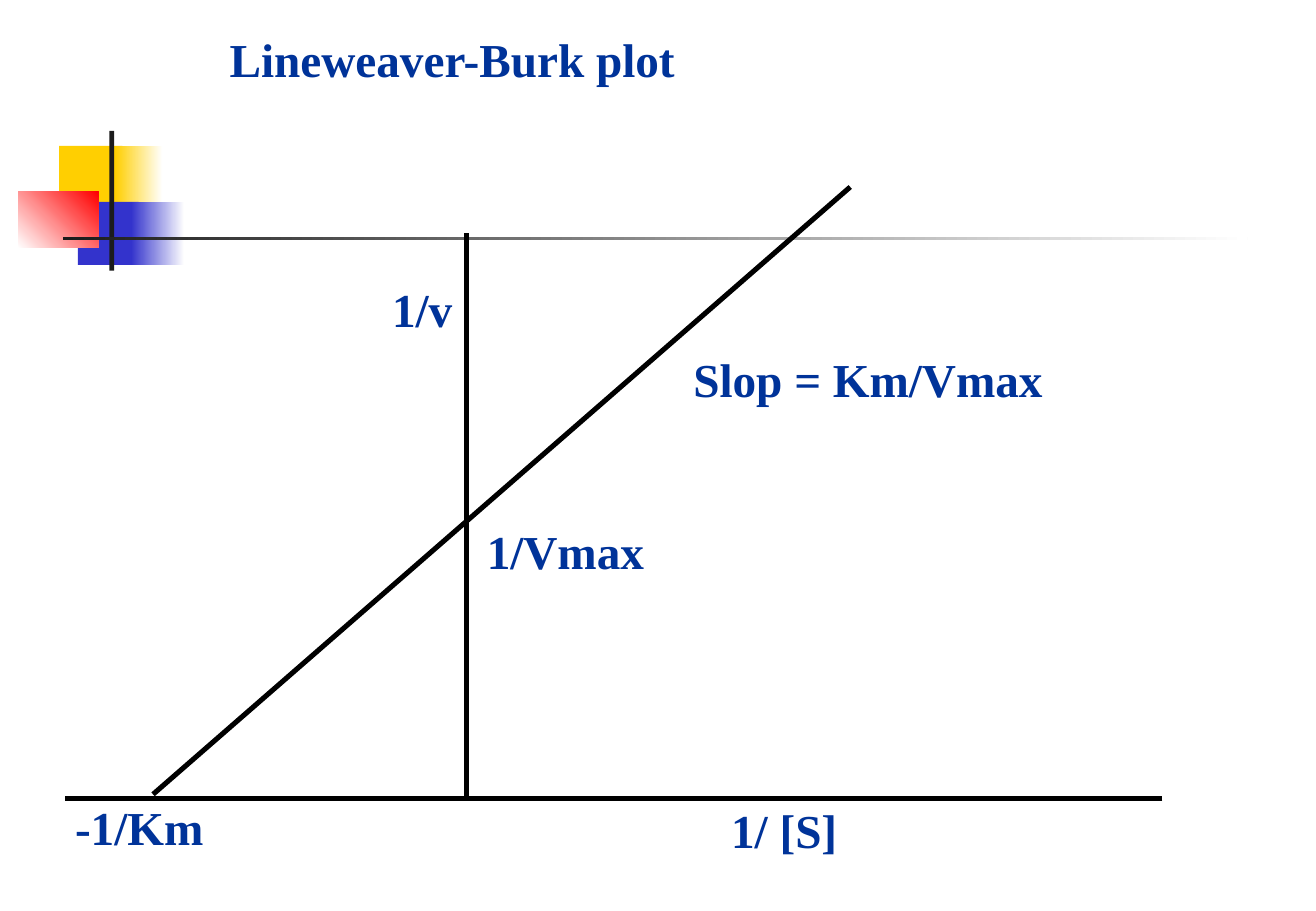
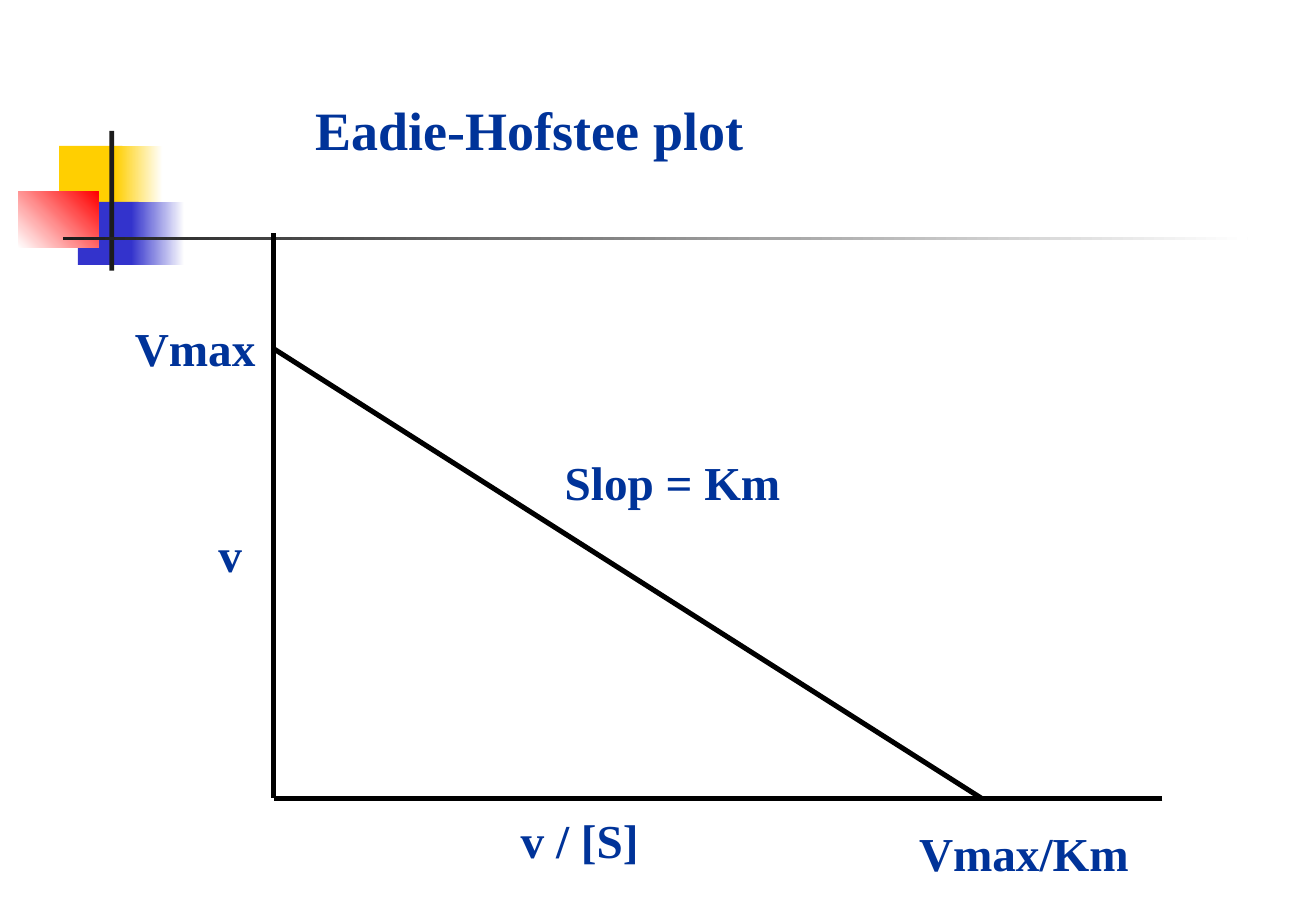
from typing import NamedTuple, Optional

from lxml.etree import SubElement
from pptx import Presentation
from pptx.dml.color import RGBColor
from pptx.enum.shapes import MSO_CONNECTOR, MSO_SHAPE
from pptx.enum.text import MSO_ANCHOR, MSO_AUTO_SIZE, PP_ALIGN
from pptx.oxml.ns import qn
from pptx.slide import Slide, SlideLayout
from pptx.text.text import TextFrame
from pptx.util import Cm, Pt

NAVY = RGBColor(0x00, 0x33, 0x99)
BLACK = RGBColor(0x00, 0x00, 0x00)
WHITE = RGBColor(0xFF, 0xFF, 0xFF)
YELLOW = RGBColor(0xFF, 0xCF, 0x01)
BLUE = RGBColor(0x33, 0x33, 0xCC)
RED = RGBColor(0xFF, 0x00, 0x00)
CHARCOAL = RGBColor(0x1C, 0x1C, 0x1C)

FONT_NAME = "Times New Roman"
LABEL_SIZE = 28
LABEL_HEIGHT = 1.45
TITLE_WIDTH = 16.71
AXIS_TOP, AXIS_FLOOR, AXIS_RIGHT = 4.88, 16.69, 24.31


class Block(NamedTuple):
    left: float
    top: float
    width: float
    height: float
    color: RGBColor
    end_color: Optional[RGBColor] = None
    angle: float = 0


class Segment(NamedTuple):
    start_x: float
    start_y: float
    end_x: float
    end_y: float


class Label(NamedTuple):
    text: str
    left: float
    top: float
    width: float


class Title(NamedTuple):
    text: str
    left: float
    top: float
    height: float
    size: int


class Plot(NamedTuple):
    title: Title
    axis_x: float
    axis_left: float
    trend: Segment
    labels: list[Label]


MOTIF = [
    Block(1.24, 3.05, 1.32, 1.32, YELLOW),
    Block(2.41, 3.05, 0.99, 1.32, YELLOW, WHITE),
    Block(1.63, 4.22, 1.27, 1.32, BLUE),
    Block(2.74, 4.22, 1.12, 1.32, BLUE, WHITE),
    Block(0.38, 4.01, 1.68, 1.17, WHITE, RED, 45),
    Block(2.29, 2.74, 0.1, 2.92, CHARCOAL),
    Block(1.32, 4.95, 24.77, 0.08, CHARCOAL, WHITE),
]

PLOTS = [
    Plot(
        Title("Lineweaver-Burk plot", 4.55, 0.51, 1.45, 28),
        axis_x=9.75,
        axis_left=1.35,
        trend=Segment(3.2, 16.61, 17.78, 3.91),
        labels=[
            Label("1/Vmax", 9.93, 10.8, 3.84),
            Label("-1/Km", 1.32, 16.56, 3.23),
            Label("Slop = Km/Vmax", 14.25, 7.19, 7.9),
            Label("1/ [S]", 15.04, 16.64, 2.77),
            Label("1/v", 7.95, 5.74, 1.78),
        ],
    ),
    Plot(
        Title("Eadie-Hofstee plot", 6.35, 1.9, 1.63, 32),
        axis_x=5.72,
        axis_left=5.72,
        trend=Segment(20.52, AXIS_FLOOR, 5.72, 7.29),
        labels=[
            Label("Vmax", 2.57, 6.55, 3.07),
            Label("Vmax/Km", 18.97, 17.12, 4.95),
            Label("Slop = Km", 11.56, 9.35, 5.08),
            Label("v / [S]", 10.64, 16.84, 3.02),
            Label("v", 4.32, 10.85, 1.02),
        ],
    ),
]


def add_motif(layout: SlideLayout, slide: Slide) -> None:
    """Draw the motif with the slide's shape tools and move it to the shared layout."""
    for shape_id, block in enumerate(MOTIF, start=101):
        shape = slide.shapes.add_shape(
            MSO_SHAPE.RECTANGLE,
            Cm(block.left), Cm(block.top), Cm(block.width), Cm(block.height),
        )
        shape.shadow.inherit = False
        shape.line.fill.background()
        if block.end_color is None:
            shape.fill.solid()
            shape.fill.fore_color.rgb = block.color
        else:
            shape.fill.gradient()
            shape.fill.gradient_angle = block.angle
            for stop, color in zip(shape.fill.gradient_stops, (block.color, block.end_color)):
                stop.color.rgb = color
        shape.element.nvSpPr.cNvPr.set("id", str(shape_id))
        layout.shapes.element.append(shape.element)


def write_text(frame: TextFrame, text: str, size: int, wrap: bool) -> None:
    """Write one bold navy paragraph into a text frame."""
    frame.text = text
    frame.word_wrap = wrap
    frame.auto_size = MSO_AUTO_SIZE.NONE
    frame.vertical_anchor = MSO_ANCHOR.TOP
    paragraph = frame.paragraphs[0]
    paragraph.alignment = PP_ALIGN.LEFT
    paragraph.font.name = FONT_NAME
    paragraph.font.size = Pt(size)
    paragraph.font.bold = True
    paragraph.font.color.rgb = NAVY


def set_title(slide: Slide, title: Title) -> None:
    """Place and format the title placeholder."""
    shape = slide.shapes.title
    shape.left, shape.top = Cm(title.left), Cm(title.top)
    shape.width, shape.height = Cm(TITLE_WIDTH), Cm(title.height)
    write_text(shape.text_frame, title.text, title.size, wrap=True)


def add_segment(slide: Slide, segment: Segment) -> None:
    """Draw a black line without a shadow."""
    connector = slide.shapes.add_connector(
        MSO_CONNECTOR.STRAIGHT, *(Cm(value) for value in segment)
    )
    connector.line.color.rgb = BLACK
    connector.line.width = Pt(3)
    SubElement(connector.element.spPr, qn("a:effectLst"))


def add_label(slide: Slide, label: Label) -> None:
    """Add a one-line label."""
    text_box = slide.shapes.add_textbox(
        Cm(label.left), Cm(label.top), Cm(label.width), Cm(LABEL_HEIGHT)
    )
    write_text(text_box.text_frame, label.text, LABEL_SIZE, wrap=False)


def fill_slide(slide: Slide, plot: Plot) -> None:
    """Draw a plot with its title, axes, trend and labels."""
    set_title(slide, plot.title)
    add_segment(slide, Segment(plot.axis_x, AXIS_TOP, plot.axis_x, AXIS_FLOOR))
    add_segment(slide, Segment(AXIS_RIGHT, AXIS_FLOOR, plot.axis_left, AXIS_FLOOR))
    add_segment(slide, plot.trend)
    for label in plot.labels:
        add_label(slide, label)


def main() -> None:
    """Build and save the presentation."""
    presentation = Presentation()
    presentation.slide_width, presentation.slide_height = Cm(27.52), Cm(19.05)
    layout = presentation.slide_layouts.get_by_name("Title Only")
    slides = [presentation.slides.add_slide(layout) for _ in PLOTS]
    add_motif(layout, slides[0])
    for slide, plot in zip(slides, PLOTS):
        fill_slide(slide, plot)
    presentation.save("out.pptx")


if __name__ == "__main__":
    main()
